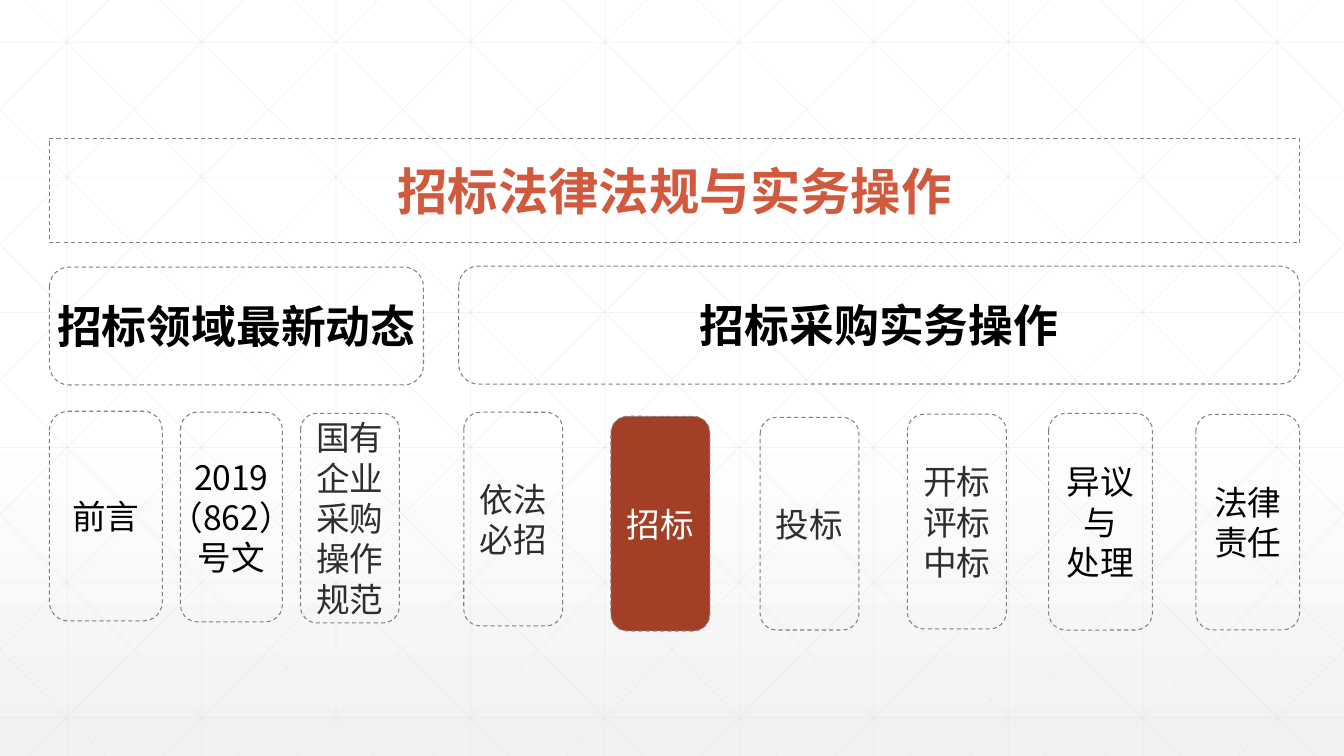
import copy

import pptx
import pptx.dml.color
import pptx.enum.dml
import pptx.enum.shapes
import pptx.enum.text
import pptx.oxml.ns
import pptx.util
from lxml import etree

WIDTH, HEIGHT = pptx.util.Inches(13.33), pptx.util.Inches(7.5)
FONT = "Noto Sans CJK JP"
COLORS = {
    "white": "FFFFFF", "mist": "F2F2F2", "mesh": "D9D9D9", "border": "808080",
    "title": "D15A3E", "active": "A43F27", "black": "000000", "dark": "2D2E2D",
}

# Left, top, width and height as percentages of the slide
TITLE_AREA = (3.68, 18.27, 93.02, 13.87)
PARTS = [
    ("招标领域最新动态", (3.68, 35.33, 27.83, 15.6)),
    ("招标采购实务操作", (34.13, 35.2, 62.57, 15.6)),
]
CHAPTERS = [
    ("前言", (3.68, 54.4, 8.4, 27.73), "black"),
    ("2019\n（862）\n号文", (13.43, 54.53, 7.58, 27.73), "black"),
    ("国有\n企业\n采购\n操作\n规范", (22.36, 54.67, 7.35, 27.73), "dark"),
    ("依法\n必招", (34.51, 54.53, 7.35, 28.27), "dark"),
    ("招标", (45.46, 55.07, 7.35, 28.4), "white"),
    ("投标", (56.56, 55.2, 7.35, 28.13), "dark"),
    ("开标\n评标\n中标", (67.52, 54.8, 7.35, 28.4), "dark"),
    ("异议\n与\n处理", (78.02, 54.67, 7.73, 28.67), "black"),
    ("法律\n责任", (88.97, 54.8, 7.73, 28.53), "black"),
]


def rgb(name):
    return pptx.dml.color.RGBColor.from_string(COLORS[name])


def add_tag(parent, tag, **attributes):
    return etree.SubElement(parent, pptx.oxml.ns.qn(tag), attributes)


def place(area):
    """Turn percentages of the slide into lengths."""
    sides = (WIDTH, HEIGHT, WIDTH, HEIGHT)
    return [round(side * share / 100) for side, share in zip(sides, area)]


def write(box, text, size=24, color="black", bold=False):
    frame = box.text_frame
    frame.text = text
    frame.auto_size = pptx.enum.text.MSO_AUTO_SIZE.NONE
    frame.word_wrap = False
    frame.vertical_anchor = pptx.enum.text.MSO_ANCHOR.MIDDLE
    for paragraph in frame.paragraphs:
        paragraph.alignment = pptx.enum.text.PP_ALIGN.CENTER
        for run in paragraph.runs:
            run.font.name = FONT
            run.font.size = pptx.util.Pt(size)
            run.font.bold = bold
            run.font.color.rgb = rgb(color)
            add_tag(run.font._element, "a:ea", typeface=FONT)


def style_box(box, fill=None):
    if fill:
        box.fill.solid()
        box.fill.fore_color.rgb = rgb(fill)
    else:
        box.fill.background()
    box.line.color.rgb = rgb("border")
    box.line.width = pptx.util.Pt(0.75)
    box.line.dash_style = pptx.enum.dml.MSO_LINE.DASH


def add_box(slide, text, area, fill=None, **text_format):
    box = slide.shapes.add_shape(
        pptx.enum.shapes.MSO_SHAPE.ROUNDED_RECTANGLE, *place(area))
    box.shadow.inherit = False
    style_box(box, fill)
    write(box, text, **text_format)


def add_title(slide, text, area):
    title = slide.shapes.title
    title.left, title.top, title.width, title.height = place(area)
    outline = add_tag(title._element.spPr, "a:prstGeom", prst="roundRect")
    add_tag(outline, "a:avLst")
    style_box(title)
    write(title, text, size=36, color="title", bold=True)
    # Keep the title in front of the mesh
    slide.shapes._spTree.append(title._element)


def add_mesh_line(slide, *ends):
    line = slide.shapes.add_connector(
        pptx.enum.shapes.MSO_CONNECTOR.STRAIGHT,
        *[pptx.util.Inches(end) for end in ends])
    line.line.color.rgb = rgb("mesh")
    line.line.width = pptx.util.Pt(0.5)
    properties = line._element.spPr
    color = properties.find(".//" + pptx.oxml.ns.qn("a:srgbClr"))
    add_tag(color, "a:alpha", val="30000")
    add_tag(properties, "a:effectLst")


def add_mesh(slide):
    wide, high, column, row = 13.33, 7.5, 4 / 3, 1.34
    for i in range(10):
        x = column * (i + 0.5)
        add_mesh_line(slide, x, 0, x, high)
    for i in range(6):
        y = 0.42 + row * i
        add_mesh_line(slide, 0, y, wide, y)
    # Diagonals are clipped to the slide and mirrored about its middle
    slope = row / column
    for i in range(-5, 10):
        start = 0.25 + column * i
        x1, x2 = max(start, 0), min(start + high / slope, wide)
        y1, y2 = (x1 - start) * slope, (x2 - start) * slope
        add_mesh_line(slide, x1, y1, x2, y2)
        add_mesh_line(slide, wide - x1, y1, wide - x2, y2)


def paint_background(slide):
    fill = slide.background.fill
    fill.gradient()
    fill.gradient_angle = 270
    stops = slide._element.find(".//" + pptx.oxml.ns.qn("a:gsLst"))
    stops.append(copy.deepcopy(stops[-1]))
    shades = [(0, "white"), (0.53, "white"), (1, "mist")]
    for stop, (position, color) in zip(fill.gradient_stops, shades):
        stop.position = position
        stop.color.rgb = rgb(color)


def main():
    deck = pptx.Presentation()
    deck.slide_width, deck.slide_height = WIDTH, HEIGHT
    slide = deck.slides.add_slide(deck.slide_layouts.get_by_name("Title Only"))

    # Backdrop
    paint_background(slide)
    add_mesh(slide)

    # Title, parts and chapters
    add_title(slide, "招标法律法规与实务操作", TITLE_AREA)
    for text, area in PARTS:
        add_box(slide, text, area, size=32, bold=True)
    for text, area, color in CHAPTERS:
        fill = "active" if color == "white" else None
        add_box(slide, text, area, fill=fill, color=color)

    deck.save("out.pptx")


if __name__ == "__main__":
    main()
